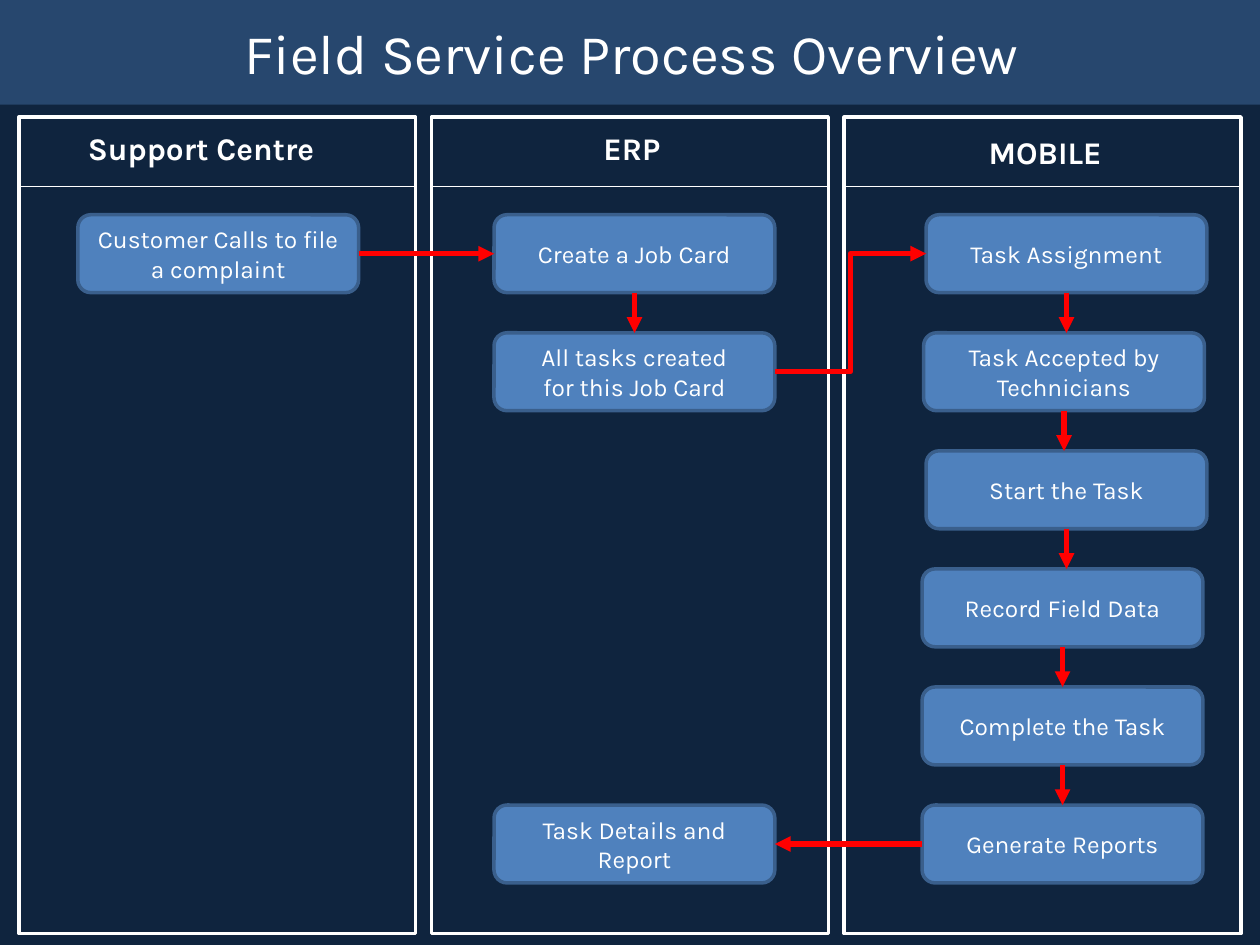
from lxml import etree
from pptx import Presentation
from pptx.dml.color import RGBColor
from pptx.enum.shapes import MSO_CONNECTOR as Link, MSO_SHAPE as Preset
from pptx.enum.text import MSO_ANCHOR as Anchor, MSO_AUTO_SIZE as AutoSize, PP_ALIGN as Align
from pptx.oxml.ns import qn
from pptx.util import Cm, Pt

COLORS = {"night": "0F243E", "blue": "4F81BD", "edge": "3A5F8C",
          "white": "FFFFFF", "arrow": "FF0000"}
RGB = {name: RGBColor.from_string(value) for name, value in COLORS.items()}
TOP, LEFT, BOTTOM, RIGHT = range(4)  # connection sites of a step


def write(holder, words, size, align=Align.CENTER, bold=False, inset=0.25):
    frame = holder.text_frame
    frame.text = words
    frame_format = {"word_wrap": True, "auto_size": AutoSize.NONE,
                    "vertical_anchor": Anchor.MIDDLE,
                    "margin_left": Cm(inset), "margin_right": Cm(inset),
                    "margin_top": Cm(0.1), "margin_bottom": Cm(0.1)}
    for key, value in frame_format.items():
        setattr(frame, key, value)
    paragraph = frame.paragraphs[0]
    paragraph.alignment = align
    font_format = {"name": "Karla", "size": Pt(size), "bold": bold}
    for key, value in font_format.items():
        setattr(paragraph.runs[0].font, key, value)
    paragraph.runs[0].font.color.rgb = RGB["white"]


def draw_connector(kind, start, end, color, width):
    connector = shapes.add_connector(kind, *start, *end)
    connector.line.color.rgb = RGB[color]
    connector.line.width = Pt(width)
    etree.SubElement(connector._element.spPr, qn("a:effectLst"))
    return connector


prs = Presentation()
prs.slide_width, prs.slide_height = Cm(25.4), Cm(19.05)
slide = prs.slides.add_slide(prs.slide_layouts[5])
slide.background.fill.solid()
slide.background.fill.fore_color.rgb = RGB["night"]
shapes = slide.shapes

# Title on a translucent band
band = shapes.add_shape(Preset.RECTANGLE, 0, 0, prs.slide_width, Cm(2.11))
band.shadow.inherit = False
band.fill.solid()
band.fill.fore_color.rgb = RGB["blue"]
band.line.fill.background()
band_color = band.fill._xPr.find(".//" + qn("a:srgbClr"))
etree.SubElement(band_color, qn("a:alpha"), val="38000")
title = shapes.title
title_place = {"left": Cm(3.15), "top": Cm(0.23), "width": Cm(19.18), "height": Cm(1.63)}
for key, value in title_place.items():
    setattr(title, key, value)
write(title, "Field Service Process Overview", 32)
title._element.addprevious(band._element)

# Swimlanes: heading, heading left and top, alignment
lanes = [("Support Centre", 1.52, 2.47, Align.LEFT),
         ("ERP", 9.91, 2.47, Align.CENTER),
         ("MOBILE", 18.24, 2.55, Align.CENTER)]
LANE_WIDTH, LANE_PITCH = 8, 8.32
for column, (heading, left, top, align) in enumerate(lanes):
    lane_left = 0.38 + column * LANE_PITCH
    lane = shapes.add_shape(Preset.RECTANGLE, Cm(lane_left), Cm(2.36), Cm(LANE_WIDTH), Cm(16.46))
    lane.shadow.inherit = False
    lane.fill.background()
    lane.line.color.rgb = RGB["white"]
    lane.line.width = Pt(2)
    draw_connector(Link.STRAIGHT, (Cm(lane_left), Cm(3.76)),
                   (Cm(lane_left + LANE_WIDTH), Cm(3.76)), "white", 0.75)
    label = shapes.add_textbox(Cm(left), Cm(top), Cm(5.66), Cm(1.02))
    write(label, heading, 18, align, bold=True)

# Process steps: wording, left, row, side inset
steps = [("Customer Calls to file a complaint", 1.57, 0, 0.15),
         ("Create a Job Card", 9.96, 0, 0.6),
         ("All tasks created for this Job Card", 9.96, 1, 0.6),
         ("Task Assignment", 18.67, 0, 0.6),
         ("Task Accepted by Technicians", 18.62, 1, 0.6),
         ("Start the Task", 18.67, 2, 0.6),
         ("Record Field Data", 18.59, 3, 0.6),
         ("Complete the Task", 18.59, 4, 0.6),
         ("Generate Reports", 18.59, 5, 0.6),
         ("Task Details and Report", 9.96, 5, 0.6)]
boxes = []
for words, left, row, inset in steps:
    step = shapes.add_shape(Preset.ROUNDED_RECTANGLE, Cm(left), Cm(4.33 + row * 2.38),
                            Cm(5.66), Cm(1.57))
    step.shadow.inherit = False
    step.fill.solid()
    step.fill.fore_color.rgb = RGB["blue"]
    step.line.color.rgb = RGB["edge"]
    step.line.width = Pt(2)
    write(step, words, 14, inset=inset)
    boxes.append(step)

# Flow arrows: each step leads to the next one
exits = {0: (RIGHT, LEFT), 2: (RIGHT, LEFT), 8: (LEFT, RIGHT)}
for index, (source, target) in enumerate(zip(boxes, boxes[1:])):
    leave, enter = exits.get(index, (BOTTOM, TOP))
    kind = Link.ELBOW if index == 2 else Link.STRAIGHT
    flow = draw_connector(kind, (0, 0), (0, 0), "arrow", 3)
    flow.begin_connect(source, leave)
    flow.end_connect(target, enter)
    if leave == BOTTOM:
        flow.end_x = flow.begin_x  # keep downward arrows vertical
    etree.SubElement(flow.line._get_or_add_ln(), qn("a:tailEnd"), type="triangle")

prs.save("out.pptx")
